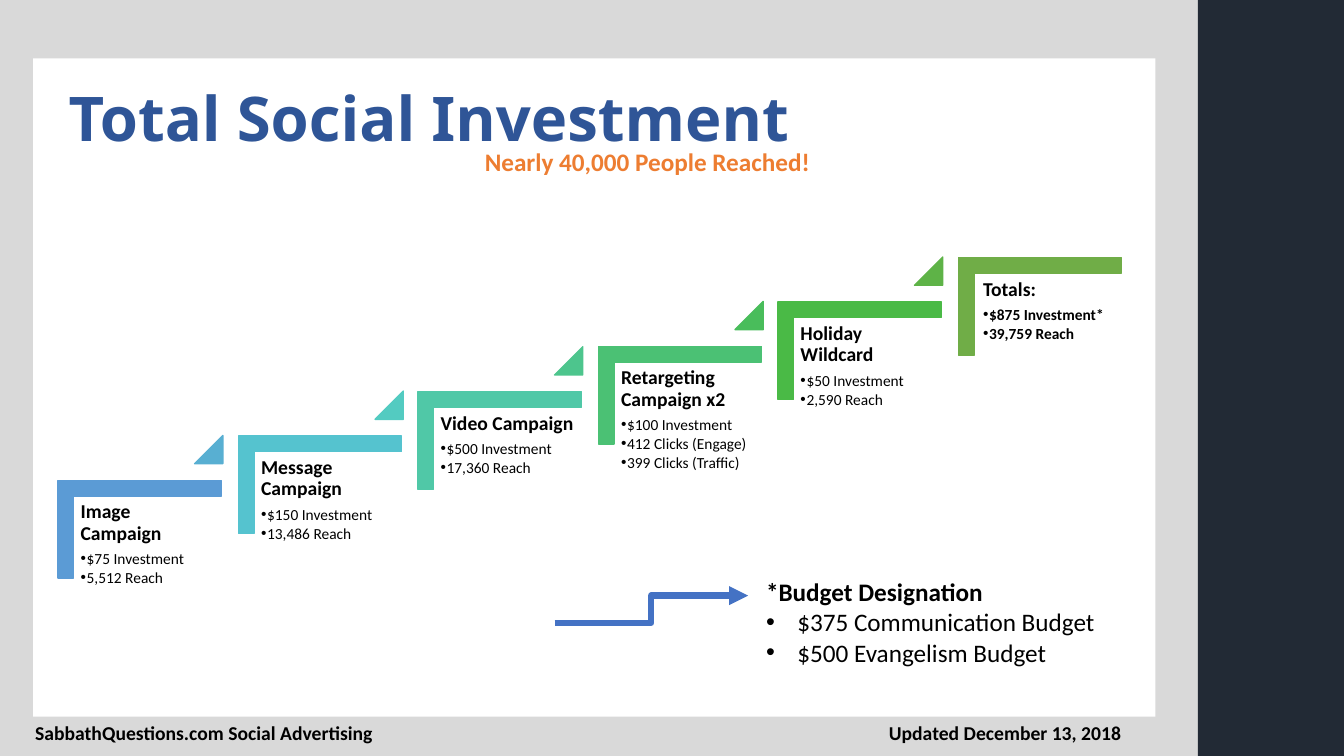
"""Build the Total Social Investment slide."""
from dataclasses import dataclass

from lxml.etree import SubElement
from pptx import Presentation
from pptx.dml.color import RGBColor as RGB
from pptx.enum.shapes import MSO_CONNECTOR as LINK, MSO_SHAPE as KIND
from pptx.enum.text import MSO_ANCHOR as ANCHOR, MSO_AUTO_SIZE as FIT, PP_ALIGN as ALIGN
from pptx.oxml.ns import qn
from pptx.shapes.autoshape import Shape
from pptx.slide import Slide
from pptx.util import Emu, Pt

SCALE = 9144
BLACK = RGB(0x00, 0x00, 0x00)
WHITE = RGB(0xFF, 0xFF, 0xFF)
GREY = RGB(0xD9, 0xD9, 0xD9)
NAVY = RGB(0x22, 0x2A, 0x35)
BLUE = RGB(0x2F, 0x55, 0x97)
ARROW = RGB(0x44, 0x72, 0xC4)
ORANGE = RGB(0xED, 0x7D, 0x31)


@dataclass(frozen=True)
class Box:
    left: int
    top: int
    width: int
    height: int

    def emu(self) -> tuple[Emu, Emu, Emu, Emu]:
        return px(self.left), px(self.top), px(self.width), px(self.height)


@dataclass(frozen=True)
class Line:
    text: str
    size: int
    bold: bool = True
    color: RGB = BLACK
    font: str = "Calibri"
    align: ALIGN = ALIGN.LEFT
    indent: int = 0
    level: int = 0
    space: float = 1.0
    after: float = 0.0


@dataclass(frozen=True)
class Step:
    head: str
    facts: tuple[str, ...]
    color: RGB
    tip: RGB | None = None


@dataclass(frozen=True)
class Note:
    box: Box
    lines: tuple[Line, ...]


PANELS = (
    (Box(0, 0, 1188, 750), GREY),
    (Box(33, 58, 1113, 653), WHITE),
    (Box(1188, 0, 146, 750), NAVY),
)
STEPS = (
    Step("Image Campaign", ("$75 Investment", "5,512 Reach"),
         RGB(0x5B, 0x9B, 0xD5), RGB(0x58, 0xAF, 0xD2)),
    Step("Message Campaign", ("$150 Investment", "13,486 Reach"),
         RGB(0x55, 0xC3, 0xCF), RGB(0x53, 0xCB, 0xC1)),
    Step("Video Campaign", ("$500 Investment", "17,360 Reach"),
         RGB(0x50, 0xC8, 0xA7), RGB(0x4D, 0xC5, 0x8D)),
    Step("Retargeting Campaign x2",
         ("$100 Investment", "412 Clicks (Engage)", "399 Clicks (Traffic)"),
         RGB(0x4B, 0xC1, 0x74), RGB(0x49, 0xBD, 0x5B)),
    Step("Holiday Wildcard", ("$50 Investment", "2,590 Reach"),
         RGB(0x4A, 0xBA, 0x46), RGB(0x5E, 0xB3, 0x47)),
    Step("Totals:", ("$875 Investment*", "39,759 Reach"), RGB(0x70, 0xAD, 0x47)),
)
NOTES = (
    Note(Box(750, 567, 354, 101), (
        Line("*Budget Designation", 18),
        Line("$375 Communication Budget", 18, bold=False, indent=31),
        Line("$500 Evangelism Budget", 18, bold=False, indent=31),
    )),
    Note(Box(25, 710, 522, 34), (Line("SabbathQuestions.com Social Advertising", 14),)),
    Note(Box(600, 710, 522, 34),
         (Line("Updated December 13, 2018", 14, align=ALIGN.RIGHT),)),
    Note(Box(471, 140, 481, 40),
         (Line("Nearly 40,000 People Reached!", 18, color=ORANGE),)),
)


def px(size: int) -> Emu:
    return Emu(size * SCALE)


def place(shape: Shape, box: Box) -> None:
    shape.left, shape.top, shape.width, shape.height = box.emu()


def write(shape: Shape, lines: tuple[Line, ...]) -> None:
    frame = shape.text_frame
    frame.word_wrap = True
    for i, line in enumerate(lines):
        para = frame.add_paragraph() if i else frame.paragraphs[0]
        if line.indent:
            props = para._p.get_or_add_pPr()
            props.set("marL", str(px(line.indent)))
            props.set("indent", str(px(-line.indent)))
            SubElement(props, qn("a:buFont"), typeface="Arial")
            SubElement(props, qn("a:buChar"), char="•")
        para.level = line.level
        para.alignment = line.align
        para.line_spacing = line.space
        para.space_after = Pt(line.after)
        run = para.add_run()
        run.text = line.text
        font = run.font
        font.name, font.size, font.bold = line.font, Pt(line.size), line.bold
        font.color.rgb = line.color


def draw(slide: Slide, kind: KIND, box: Box, color: RGB, edge: bool = True) -> Shape:
    shape = slide.shapes.add_shape(kind, *box.emu())
    shape.shadow.inherit = False
    shape.fill.solid()
    shape.fill.fore_color.rgb = color
    if edge:
        shape.line.color.rgb = color
        shape.line.width = Pt(1)
    else:
        shape.line.fill.background()
    return shape


def add_title(slide: Slide) -> None:
    title = slide.shapes.title
    title.element.getparent().append(title.element)
    place(title, Box(58, 58, 1054, 126))
    title.text_frame.auto_size = FIT.NONE
    title.text_frame.vertical_anchor = ANCHOR.MIDDLE
    write(title, (Line("Total Social Investment", 44, color=BLUE,
                       font="Noto Sans", space=0.9),))


def add_step(slide: Slide, index: int, step: Step) -> None:
    left, top = round(90 + 178.6 * index), round(444 - 44.2 * index)
    corner = draw(slide, KIND.CORNER, Box(left, top, 97, 162), step.color)
    corner.rotation = 90
    corner.adjustments[0] = corner.adjustments[1] = 0.16
    last = step.tip is None
    box = Box(left - 14, top + 48, 141, 128) if last else Box(left - 16, top + 48, 146, 128)
    label = slide.shapes.add_textbox(*box.emu())
    frame = label.text_frame
    frame.margin_left = frame.margin_right = px(6)
    frame.margin_top = frame.margin_bottom = px(6)
    head = Line(step.head, 14, space=0.9, after=4.9)
    facts = tuple(Line(fact, 11, bold=last, indent=6, level=1, space=0.9, after=1.65)
                  for fact in step.facts)
    write(label, (head, *facts))
    if step.tip is not None:
        tip = draw(slide, KIND.ISOSCELES_TRIANGLE,
                   Box(left + 103, top - 12, 28, 28), step.tip)
        tip.adjustments[0] = 1


def add_note(slide: Slide, note: Note) -> None:
    label = slide.shapes.add_textbox(*note.box.emu())
    label.text_frame.auto_size = FIT.SHAPE_TO_FIT_TEXT
    write(label, note.lines)


def add_arrow(slide: Slide) -> None:
    arrow = slide.shapes.add_connector(LINK.ELBOW, px(550), px(618), px(742), px(591))
    arrow.line.color.rgb = ARROW
    arrow.line.width = Pt(4.5)
    SubElement(arrow.line._get_or_add_ln(), qn("a:tailEnd"), type="triangle")
    SubElement(arrow.element.spPr, qn("a:effectLst"))


def main() -> None:
    deck = Presentation()
    deck.slide_width, deck.slide_height = px(1333), px(750)
    slide = deck.slides.add_slide(deck.slide_layouts[5])
    for box, color in PANELS:
        draw(slide, KIND.RECTANGLE, box, color, edge=False)
    add_title(slide)
    for index, step in enumerate(STEPS):
        add_step(slide, index, step)
    add_arrow(slide)
    for note in NOTES:
        add_note(slide, note)
    deck.save("out.pptx")


if __name__ == "__main__":
    main()
